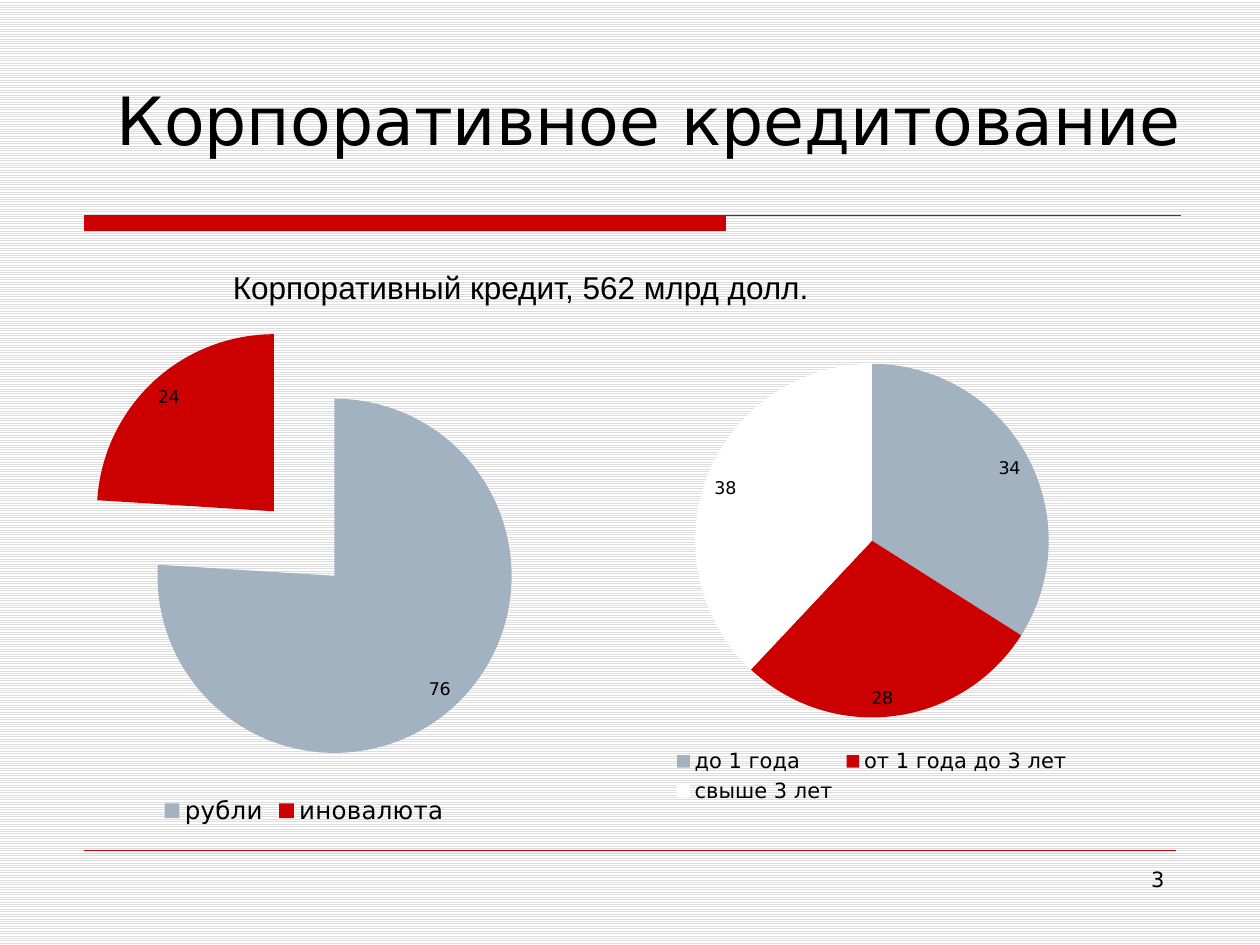
from dataclasses import dataclass

from lxml.etree import SubElement as Sub
from pptx import Presentation as Deck
from pptx.chart.data import CategoryChartData as Data
from pptx.dml.color import RGBColor as Rgb
from pptx.enum.chart import XL_CHART_TYPE as Kind
from pptx.enum.chart import XL_LABEL_POSITION as Spot
from pptx.enum.chart import XL_LEGEND_POSITION as Side
from pptx.enum.dml import MSO_PATTERN as Weave
from pptx.enum.shapes import MSO_CONNECTOR as Link
from pptx.enum.text import MSO_ANCHOR as Anchor
from pptx.enum.text import PP_ALIGN as Align
from pptx.oxml import parse_xml as from_xml
from pptx.oxml.ns import nsdecls, qn
from pptx.util import Inches, Pt


@dataclass(frozen=True)
class Theme:
    ink: Rgb = Rgb(0x00, 0x00, 0x00)
    red: Rgb = Rgb(0xCC, 0x00, 0x00)
    steel: Rgb = Rgb(0xA3, 0xB2, 0xC1)
    white: Rgb = Rgb(0xFF, 0xFF, 0xFF)
    stripe: Rgb = Rgb(0xDD, 0xDD, 0xDD)
    sans: str = "DejaVu Sans"
    plain: str = "Arial"
    title: int = 38
    lead: int = 18
    small: int = 12
    label: int = 10


class Page:
    """Holds the theme and the slide, and draws each kind of element."""

    def __init__(self, slide, theme):
        self.slide, self.theme = slide, theme
        self.shapes = slide.shapes

    def ground(self):
        fill = self.slide.background.fill
        fill.patterned()
        fill.pattern = Weave.LIGHT_HORIZONTAL
        fill.fore_color.rgb = self.theme.stripe
        fill.back_color.rgb = self.theme.white

    def style(self, font, size, face=None):
        font.name, font.size = face or self.theme.sans, Pt(size)
        font.color.rgb = self.theme.ink

    def text(self, words, box, size, face=None, align=Align.LEFT, anchor=Anchor.TOP):
        frame = self.shapes.add_textbox(*map(Inches, box)).text_frame
        frame.word_wrap, frame.vertical_anchor = True, anchor
        para = frame.paragraphs[0]
        para.alignment = align
        run = para.add_run()
        run.text = words
        self.style(run.font, size, face)

    def band(self, left, top, width, height, reach):
        right, low = left + width, top + height
        pen = self.shapes.build_freeform(Inches(left), Inches(top))
        edge = [(right, top), (right, low), (left, low)]
        pen.add_line_segments([tuple(map(Inches, p)) for p in edge])
        pen.move_to(Inches(left), Inches(top))
        pen.add_line_segments([(Inches(left + reach), Inches(top))], close=False)
        shape = pen.convert_to_shape()
        shape.shadow.inherit = False
        shape.fill.solid()
        shape.fill.fore_color.rgb = shape.line.color.rgb = self.theme.red
        shape.line.width = Pt(0.75)

    def rule(self, left, right, y):
        line = self.shapes.add_connector(
            Link.STRAIGHT, Inches(left), Inches(y), Inches(right), Inches(y))
        line.line.color.rgb, line.line.width = self.theme.red, Pt(0.25)
        Sub(line._element.spPr, qn("a:effectLst"))

    def pie(self, box, parts, key, burst=0):
        data = Data()
        data.categories = list(parts)
        data.add_series("Series 1", list(parts.values()))
        chart = self.shapes.add_chart(Kind.PIE, *map(Inches, box), data).chart
        self.style(chart.font, self.theme.label)
        chart.has_title, chart.has_legend = False, True
        legend = chart.legend
        legend.position, legend.include_in_layout = Side.BOTTOM, False
        self.style(legend.font, key)
        plot = chart.plots[0]
        plot.vary_by_categories = True
        series = plot.series[0]
        hues = self.theme.steel, self.theme.red, self.theme.white
        for i, (_, hue) in enumerate(zip(parts, hues)):
            form = series.points[i].format
            form.fill.solid()
            form.fill.fore_color.rgb = hue
            form.line.fill.background()
        if burst:
            mark = from_xml(f'<c:explosion {nsdecls("c")} val="{burst}"/>')
            series._element.find(qn("c:dPt")).addprevious(mark)
        tags = series.data_labels
        tags.show_value, tags.position = True, Spot.INSIDE_END
        self.style(tags.font, self.theme.label)


def main():
    deck, theme = Deck(), Theme()
    deck.slide_width, deck.slide_height = Inches(10), Inches(7.5)
    page = Page(deck.slides.add_slide(deck.slide_layouts[6]), theme)
    page.ground()
    page.band(0.67, 1.71, 5.09, 0.12, reach=8.7)
    page.rule(0.67, 9.33, 6.75)
    page.text("Корпоративное кредитование", (0.83, 0.3, 8.67, 1.01),
              theme.title, anchor=Anchor.BOTTOM)
    page.text("3", (7.17, 6.83, 2.17, 0.52), theme.small, align=Align.RIGHT)
    page.text("Корпоративный кредит, 562 млрд долл.", (1.75, 2.08, 7, 0.4),
              theme.lead, theme.plain)
    terms = {"до 1 года": 34, "от 1 года до 3 лет": 28, "свыше 3 лет": 38}
    page.pie((4.92, 2.75, 4, 3.67), terms, key=12)
    page.pie((0, 2.42, 4.83, 4.17), {"рубли": 76, "иновалюта": 24}, key=14, burst=25)
    deck.save("out.pptx")


if __name__ == "__main__":
    main()
